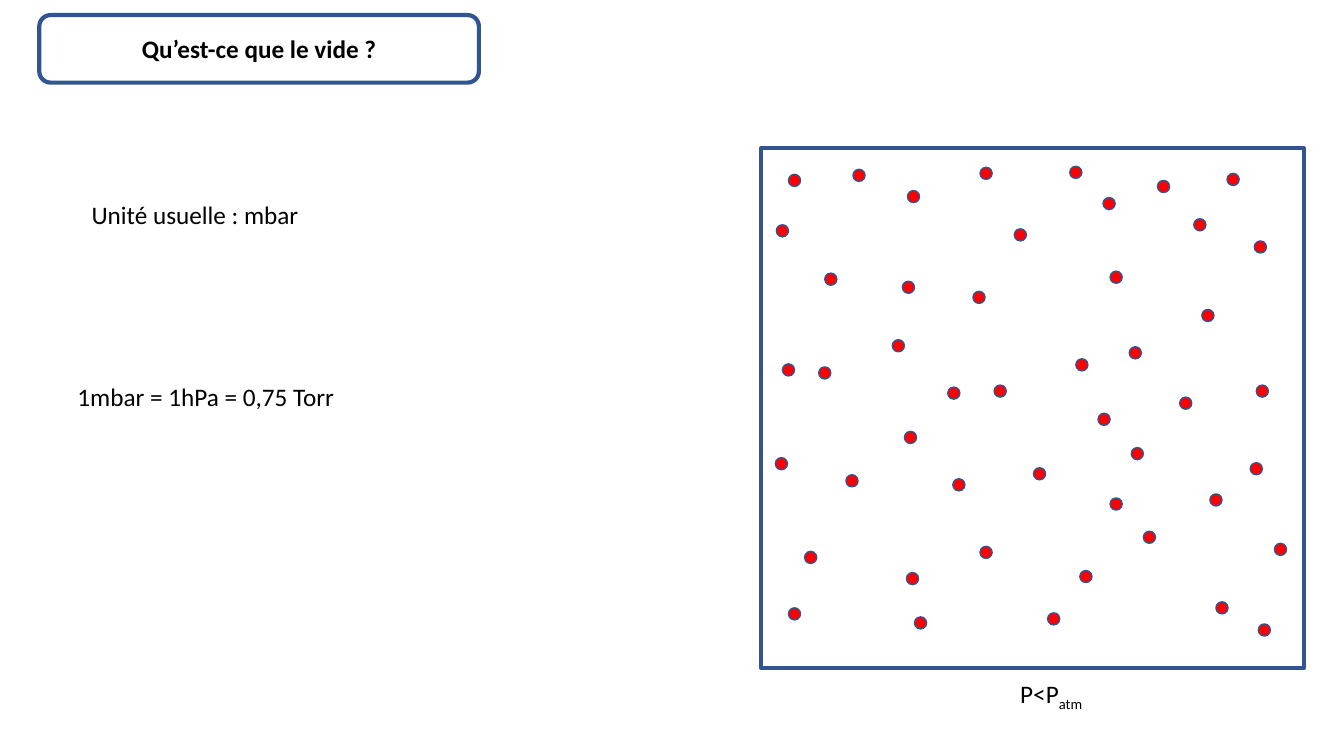
from collections import namedtuple
from dataclasses import dataclass

from pptx import Presentation
from pptx.dml.color import RGBColor
from pptx.enum.shapes import MSO_SHAPE
from pptx.enum.text import MSO_ANCHOR, MSO_AUTO_SIZE, PP_ALIGN
from pptx.util import Inches, Pt


@dataclass(frozen=True)
class Theme:
    font: str = "Calibri"
    text_size: float = 18
    text: RGBColor = RGBColor(0, 0, 0)
    outline: RGBColor = RGBColor(0x32, 0x54, 0x91)
    molecule: RGBColor = RGBColor(0xFF, 0, 0)
    frame_width: float = 3
    molecule_line: float = 1


THEME = Theme()

# The slide is a grid of square cells; boxes are given in columns and rows
COLUMNS, ROWS = 1333, 750
CELL = Inches(0.01)
MOLECULE_SIZE = 12

Box = namedtuple("Box", "column row width height")

# Column and row of each gas molecule, counted from the chamber's corner
MOLECULES = [
    (210, 142), (393, 32), (217, 19), (306, 18), (429, 70), (334, 263),
    (489, 92), (367, 297), (27, 26), (15, 76), (462, 25), (339, 49),
    (91, 21), (27, 456), (491, 235), (346, 122), (63, 124), (142, 281),
    (57, 217), (130, 190), (485, 312), (43, 400), (365, 197), (415, 247),
    (270, 317), (445, 343), (144, 421), (217, 395), (152, 465), (284, 461),
    (190, 328), (251, 80), (145, 42), (231, 235), (140, 132), (312, 209),
    (316, 419), (84, 324), (509, 392), (437, 160), (493, 472), (451, 450),
    (346, 347), (379, 380), (21, 214), (185, 237), (14, 307),
]


def to_lengths(box):
    return [cells * CELL for cells in box]


def add_outlined_shape(shapes, kind, box, line_width, fill=None):
    shape = shapes.add_shape(kind, *to_lengths(box))
    shape.shadow.inherit = False
    if fill is None:
        shape.fill.background()
    else:
        shape.fill.solid()
        shape.fill.fore_color.rgb = fill
    shape.line.color.rgb = THEME.outline
    shape.line.width = Pt(line_width)
    return shape


def add_run(paragraph, text, bold=False, subscript=False):
    run = paragraph.add_run()
    run.text = text
    run.font.name = THEME.font
    run.font.size = Pt(THEME.text_size)
    run.font.color.rgb = THEME.text
    run.font.bold = bold
    if subscript:
        run.font._element.set("baseline", "-25000")


def add_title(slide, box, text):
    shape = add_outlined_shape(slide.shapes, MSO_SHAPE.ROUNDED_RECTANGLE,
                               box, THEME.frame_width)
    shape.text_frame.vertical_anchor = MSO_ANCHOR.MIDDLE
    paragraph = shape.text_frame.paragraphs[0]
    paragraph.alignment = PP_ALIGN.CENTER
    add_run(paragraph, text, bold=True)


def add_label(slide, box, text, subscript=""):
    text_frame = slide.shapes.add_textbox(*to_lengths(box)).text_frame
    text_frame.word_wrap = False
    text_frame.auto_size = MSO_AUTO_SIZE.SHAPE_TO_FIT_TEXT
    paragraph = text_frame.paragraphs[0]
    add_run(paragraph, text)
    if subscript:
        add_run(paragraph, subscript, subscript=True)


def add_chamber(slide, box):
    shapes = slide.shapes.add_group_shape().shapes
    add_outlined_shape(shapes, MSO_SHAPE.RECTANGLE, box, THEME.frame_width)
    for column, row in MOLECULES:
        molecule = Box(box.column + column, box.row + row,
                       MOLECULE_SIZE, MOLECULE_SIZE)
        add_outlined_shape(shapes, MSO_SHAPE.OVAL, molecule,
                           THEME.molecule_line, THEME.molecule)


def main():
    presentation = Presentation()
    presentation.slide_width = COLUMNS * CELL
    presentation.slide_height = ROWS * CELL
    slide = presentation.slides.add_slide(presentation.slide_layouts[6])

    # Title
    add_title(slide, Box(39, 15, 436, 67), "Qu’est-ce que le vide ?")

    # Gas chamber and its pressure
    add_chamber(slide, Box(755, 147, 538, 516))
    add_label(slide, Box(1002, 668, 85, 40), "P<P", subscript="atm")

    # Pressure units
    add_label(slide, Box(81, 193, 228, 40), "Unité usuelle : mbar")
    add_label(slide, Box(67, 373, 278, 40), "1mbar = 1hPa = 0,75 Torr")

    presentation.save("out.pptx")


if __name__ == "__main__":
    main()
